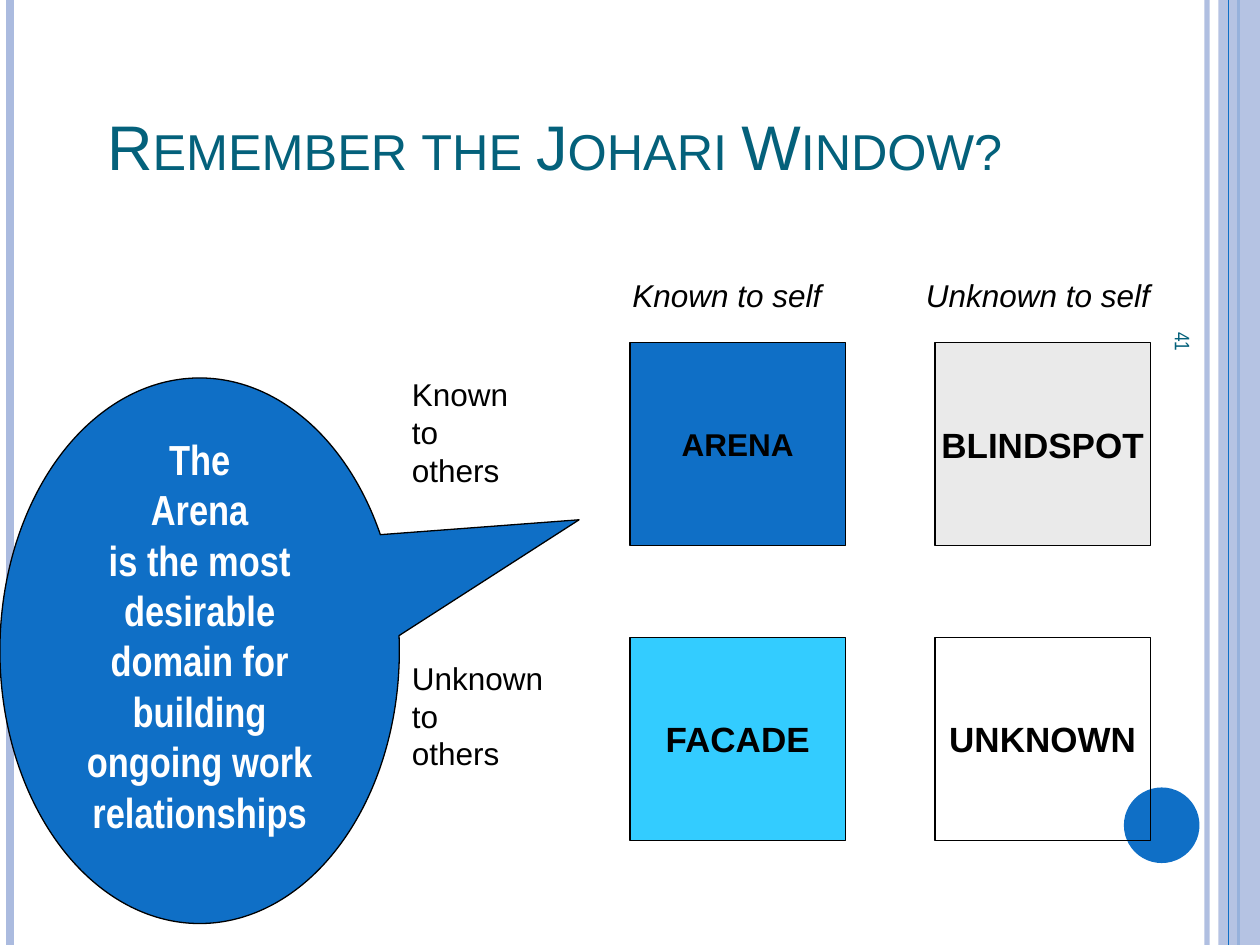
from dataclasses import dataclass

from lxml.etree import SubElement
from pptx import Presentation
from pptx.dml.color import RGBColor
from pptx.enum.shapes import MSO_CONNECTOR as Connector, MSO_SHAPE as Shape
from pptx.enum.text import MSO_ANCHOR as Anchor, PP_ALIGN as Align
from pptx.oxml.ns import qn
from pptx.util import Inches, Pt


@dataclass(frozen=True)
class Theme:
    blue: str = "0F6FC6"
    lilac: str = "ABBBDF"
    teal: str = "04617B"
    cyan: str = "33CCFF"
    grey: str = "EAEAEA"
    black: str = "000000"
    white: str = "FFFFFF"
    font: str = "Arial"
    narrow: str = "Arial Narrow"
    title: int = 36
    callout: int = 24
    heading: int = 20
    label: int = 18
    number: int = 12


THEME = Theme()


def set_alpha(shape, percent):
    for color in shape._element.spPr.iter(qn("a:srgbClr")):
        SubElement(color, qn("a:alpha"), val=str(percent * 1000))


def write(shape, text, size, color=THEME.black, font=THEME.font,
          align=Align.LEFT, anchor=Anchor.TOP, wrap=True, **styles):
    frame = shape.text_frame
    frame.word_wrap = wrap
    frame.vertical_anchor = anchor
    para = frame.paragraphs[0]
    para.text = text
    para.alignment = align
    formats = {"name": font, "size": Pt(size), "bold": False, **styles}
    for span in para.runs:
        for name, value in formats.items():
            setattr(span.font, name, value)
        span.font.color.rgb = RGBColor.from_string(color)


def add_rule(page, x, color, width, alpha=None):
    rule = page.shapes.add_connector(
        Connector.STRAIGHT, Inches(x), Inches(0), Inches(x), Inches(7.5))
    rule.line.color.rgb = RGBColor.from_string(color)
    rule.line.width = Pt(width)
    if alpha:
        set_alpha(rule, alpha)
    SubElement(rule._element.spPr, qn("a:effectLst"))


def add_figure(page, kind, bounds, fill=None, outlined=True):
    figure = page.shapes.add_shape(kind, *map(Inches, bounds))
    figure.shadow.inherit = False
    if fill:
        figure.fill.solid()
        figure.fill.fore_color.rgb = RGBColor.from_string(fill)
    else:
        figure.fill.background()
    if outlined:
        figure.line.color.rgb = RGBColor.from_string(THEME.black)
        figure.line.width = Pt(0.75)
    else:
        figure.line.fill.background()
    return figure


def add_label(page, bounds, text, size=THEME.label, **styles):
    box = page.shapes.add_textbox(*map(Inches, bounds))
    write(box, text, size, **styles)
    return box


def add_frame(page):
    add_rule(page, 9.58, THEME.lilac, 3, alpha=93)
    add_rule(page, 0.08, THEME.lilac, 4.5)
    add_rule(page, 9.83, THEME.blue, 1.5)
    band = add_figure(page, Shape.RECTANGLE, (9.67, 0, 0.33, 7.5), THEME.lilac, outlined=False)
    set_alpha(band, 87)
    add_rule(page, 9.75, THEME.blue, 0.75)
    add_figure(page, Shape.OVAL, (8.92, 6.25, 0.6, 0.6), THEME.blue, outlined=False)
    number = add_label(page, (7.64, 4.09, 3.5, 0.4), "41", THEME.number,
                       color=THEME.teal, font=THEME.narrow, anchor=Anchor.MIDDLE)
    number.rotation = 90


def add_title(page, text):
    title = page.shapes.title
    bounds = {"left": 0.75, "top": 0.25, "width": 8.5, "height": 1.25}
    for name, value in bounds.items():
        setattr(title, name, Inches(value))
    write(title, text, THEME.title, THEME.teal, anchor=Anchor.BOTTOM)
    for span in title.text_frame.paragraphs[0].runs:
        span._r.get_or_add_rPr().set("cap", "small")


def add_window(page):
    columns, rows = (5, 7.42), (2.72, 5.06)
    panes = (
        (("ARENA", THEME.blue, THEME.label), ("BLINDSPOT", THEME.grey, THEME.heading)),
        (("FACADE", THEME.cyan, THEME.heading), ("UNKNOWN", None, THEME.heading)),
    )
    for top, row in zip(rows, panes):
        for left, (name, fill, size) in zip(columns, row):
            pane = add_figure(page, Shape.RECTANGLE, (left, top, 1.71, 1.61), fill)
            write(pane, name, size, align=Align.CENTER, anchor=Anchor.MIDDLE,
                  wrap=False, bold=True)
    add_label(page, (3.17, 2.93, 1.25, 1.3), "Known\vto\vothers")
    add_label(page, (3.17, 5.18, 1.42, 1.3), "Unknown\vto\vothers")
    add_label(page, (4.92, 2.14, 1.92, 0.5), "Known to self", italic=True)
    add_label(page, (7.25, 2.14, 2.25, 0.5), "Unknown to self", italic=True)


def add_callout(page, text):
    callout = add_figure(page, Shape.OVAL_CALLOUT, (0, 3, 3.17, 4.33), THEME.blue)
    callout.adjustments[0] = 0.95
    callout.adjustments[1] = -0.24
    write(callout, text, THEME.callout, THEME.white, THEME.narrow,
          Align.CENTER, Anchor.MIDDLE, bold=True)
    callout.text_frame.margin_bottom = Inches(0.3)


def main():
    deck = Presentation()
    deck.slide_width, deck.slide_height = Inches(10), Inches(7.5)
    page = deck.slides.add_slide(deck.slide_layouts.get_by_name("Title Only"))
    add_frame(page)
    add_title(page, "Remember the Johari Window?")
    add_window(page)
    add_callout(page, "The\vArena\vis the most desirable domain for building ongoing work relationships")
    deck.save("out.pptx")


if __name__ == "__main__":
    main()
